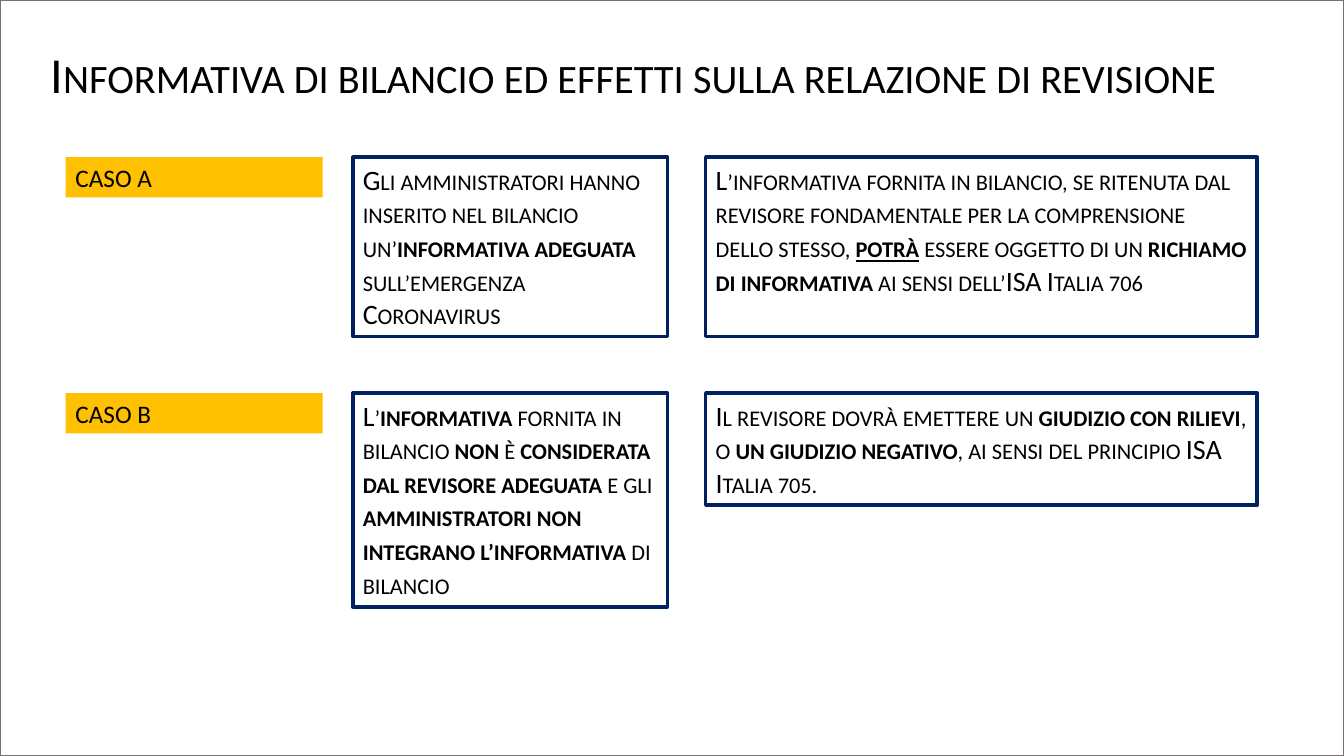
from itertools import cycle

from pptx import Presentation
from pptx.dml.color import RGBColor
from pptx.enum.shapes import MSO_SHAPE as SHAPE
from pptx.enum.text import MSO_ANCHOR as ANCHOR, MSO_AUTO_SIZE as AUTO, PP_ALIGN as ALIGN
from pptx.util import Inches, Pt

WIDTH, HEIGHT = 13.33, 7.5
FONT = "Calibri"
BLACK, NAVY, AMBER, GREY = "000000", "002060", "FFC000", "767171"
LABEL_X, FACT_X, EFFECT_X = 0.65, 3.5, 7
LABEL_W, FACT_W, EFFECT_W = 2.55, 3.12, 5.47
LABEL_H = 0.4

CASES = [
    (1.56, "CASO A",
     1.78, "Gli amministratori hanno inserito nel bilancio un’*informativa adeguata*"
           " sull’emergenza Coronavirus",
     1.78, "L’informativa fornita in bilancio, se ritenuta dal revisore fondamentale per la"
           " comprensione dello stesso, *_potrà* essere oggetto di un "
           "*richiamo di informativa *ai sensi dell’ISA Italia 706"),
    (3.9, "CASO B",
     2.12, "L’*informativa* fornita in bilancio *non* è *considerata dal revisore adeguata *"
           "e gli *amministratori non integrano l’informativa *di bilancio",
     1.11, "Il revisore dovrà emettere un *giudizio con rilievi*, o *un giudizio negativo*"
           ", ai sensi del principio ISA Italia 705."),
]


def rgb(color):
    return RGBColor.from_string(color)


def style_run(r, size, small_caps):
    r.font.name = FONT
    r.font.size = Pt(size)
    r.font.color.rgb = rgb(BLACK)
    if small_caps:
        r.font._element.set("cap", "small")


def add_rich_text(p, text, size, small_caps):
    for part, bold in zip(text.split("*"), cycle((False, True))):
        r = p.add_run()
        r.text = part.lstrip("_")
        style_run(r, size, small_caps)
        r.font.bold = bold
        r.font.underline = part.startswith("_")


def add_box(s, box, fill=None, line=None, weight=2.5):
    sp = s.shapes.add_shape(SHAPE.RECTANGLE, *map(Inches, box))
    sp.shadow.inherit = False
    if fill:
        sp.fill.solid()
        sp.fill.fore_color.rgb = rgb(fill)
    else:
        sp.fill.background()
    if line:
        sp.line.color.rgb = rgb(line)
        sp.line.width = Pt(weight)
    else:
        sp.line.fill.background()
    return sp


def add_text_box(s, box, text, size=20, small_caps=True, **look):
    tf = add_box(s, box, **look).text_frame
    tf.word_wrap = True
    tf.vertical_anchor = ANCHOR.TOP
    p = tf.paragraphs[0]
    p.alignment = ALIGN.LEFT
    add_rich_text(p, text, size, small_caps)


def add_title(s, box, text):
    title = s.shapes.title
    title.left, title.top, title.width, title.height = map(Inches, box)
    tf = title.text_frame
    tf.text = text
    tf.word_wrap = True
    tf.auto_size = AUTO.NONE
    tf.vertical_anchor = ANCHOR.MIDDLE
    p = tf.paragraphs[0]
    p.alignment = ALIGN.JUSTIFY
    p.line_spacing = 0.9
    style_run(p.runs[0], 36, True)


def add_case(s, top, label, fact_h, fact, effect_h, effect):
    add_text_box(s, (LABEL_X, top, LABEL_W, LABEL_H), label, 18, False, fill=AMBER)
    add_text_box(s, (FACT_X, top, FACT_W, fact_h), fact, line=NAVY)
    add_text_box(s, (EFFECT_X, top, EFFECT_W, effect_h), effect, line=NAVY)


def main():
    prs = Presentation()
    prs.slide_width, prs.slide_height = Inches(WIDTH), Inches(HEIGHT)
    s = prs.slides.add_slide(prs.slide_layouts[5])
    add_title(s, (0.4, 0.23, 12.4, 1.08),
              "Informativa di bilancio ed effetti sulla relazione di revisione")
    add_box(s, (0, 0, WIDTH, HEIGHT), line=GREY, weight=1)
    for case in CASES:
        add_case(s, *case)
    prs.save("out.pptx")


if __name__ == "__main__":
    main()
